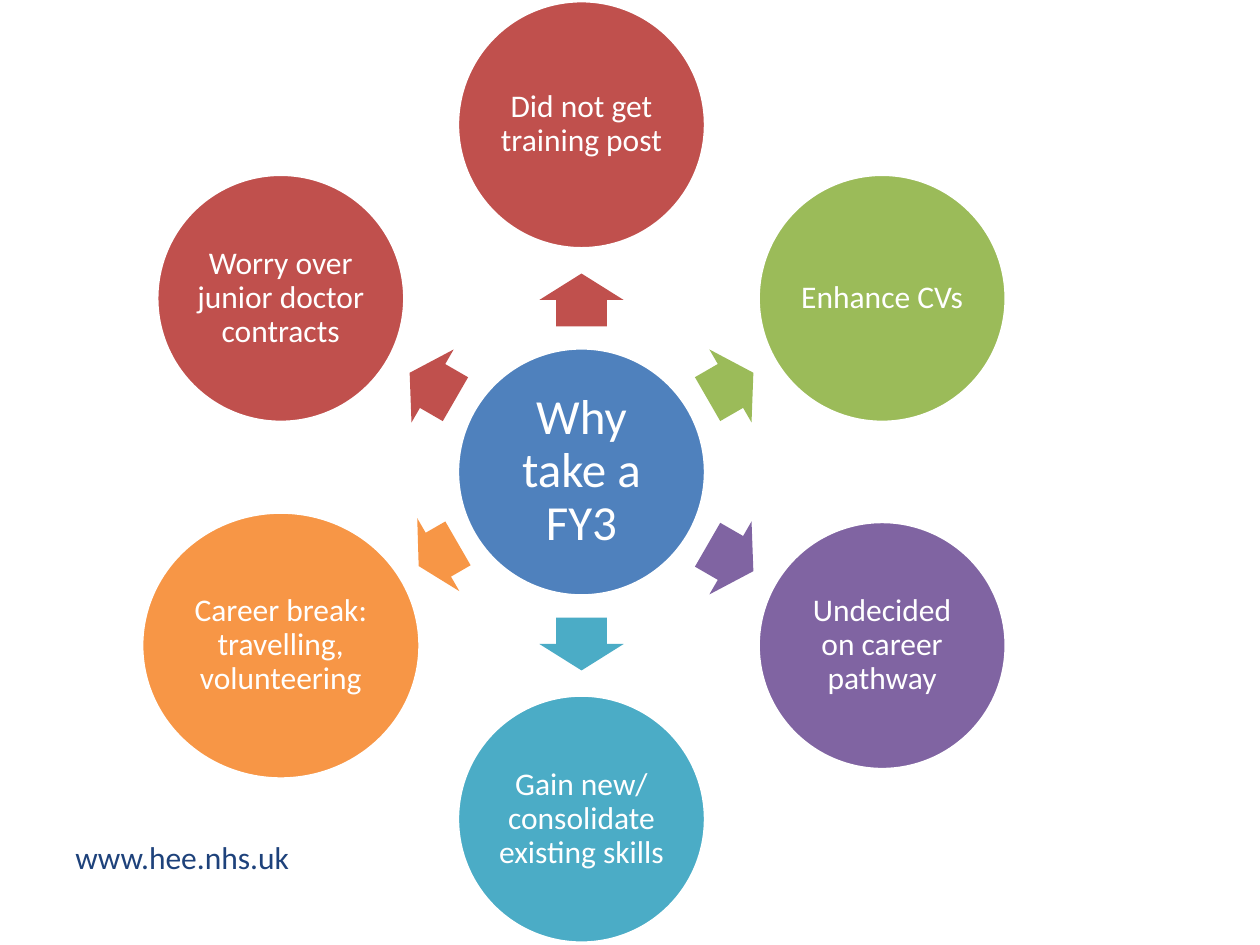
from math import cos, radians, sin

from pptx import Presentation
from pptx.dml.color import RGBColor
from pptx.enum.shapes import MSO_SHAPE
from pptx.enum.text import MSO_ANCHOR, MSO_AUTO_SIZE, PP_ALIGN
from pptx.util import Pt

FONT = "Calibri"
WHITE = "FFFFFF"
NAVY = "1E427B"
BLUE = "4F81BD"
CENTRE = (332.3, 269.7)
RING_RADIUS = 198.4
CIRCLE = (141.8, 141.8)
BREAK_CIRCLE = (159.1, 152.6)
ARROW_RADIUS = 98.3
ARROW = (30.2, 48.2)
BREAK_ARROW_RADIUS = 94.5
BREAK_ARROW = (25.9, 48.2)

# Angle (clockwise from the right), text, colour
REASONS = [
    (270, "Did not get training post", "C0504D"),
    (330, "Enhance CVs", "9BBB59"),
    (30, "Undecided on career pathway", "8064A2"),
    (90, "Gain new/ consolidate existing skills", "4BACC6"),
    (150, "Career break: travelling, volunteering", "F79646"),
    (210, "Worry over junior doctor contracts", "C0504D"),
]
BREAK_ANGLE = 150


def rgb(value):
    return RGBColor.from_string(value)


def apply(obj, values):
    for name, value in values.items():
        setattr(obj, name, value)


def write(tf, text, size, color):
    p = tf.paragraphs[0]
    r = p.add_run()
    r.text = text
    apply(r.font, {"name": FONT, "size": Pt(size)})
    r.font.color.rgb = rgb(color)
    return p


def on_ring(angle, radius):
    """Point at a clockwise angle around the centre of the diagram."""
    a = radians(angle)
    return CENTRE[0] + radius * cos(a), CENTRE[1] + radius * sin(a)


def add_filled(s, kind, centre, size, color):
    (x, y), (w, h) = centre, size
    sp = s.shapes.add_shape(kind, Pt(x - w / 2), Pt(y - h / 2), Pt(w), Pt(h))
    sp.shadow.inherit = False
    sp.fill.solid()
    sp.fill.fore_color.rgb = rgb(color)
    return sp


def add_circle(s, centre, size, color, text, font_size, inset):
    sp = add_filled(s, MSO_SHAPE.OVAL, centre, size, color)
    sp.line.color.rgb = rgb(WHITE)
    sp.line.width = Pt(2)
    tf = sp.text_frame
    apply(tf, {"word_wrap": True, "vertical_anchor": MSO_ANCHOR.MIDDLE})
    sides = ("left", "top", "right", "bottom")
    apply(tf, {f"margin_{side}": Pt(inset) for side in sides})
    p = write(tf, text, font_size, WHITE)
    apply(p, {"alignment": PP_ALIGN.CENTER, "line_spacing": 0.9})


def add_arrow(s, angle, radius, size, color):
    sp = add_filled(s, MSO_SHAPE.RIGHT_ARROW, on_ring(angle, radius), size, color)
    sp.line.fill.background()
    sp.rotation = angle
    sp.adjustments[0] = 0.6
    sp.adjustments[1] = 0.5


def add_web_address(s):
    tf = s.shapes.add_textbox(Pt(36), Pt(475.2), Pt(147.6), Pt(28.8)).text_frame
    apply(tf, {"word_wrap": False, "auto_size": MSO_AUTO_SIZE.SHAPE_TO_FIT_TEXT})
    write(tf, "www.hee.nhs.uk", 18, NAVY)


def main():
    prs = Presentation()
    apply(prs, {"slide_width": Pt(720), "slide_height": Pt(540)})
    s = prs.slides.add_slide(prs.slide_layouts[6])

    add_web_address(s)
    add_circle(s, CENTRE, CIRCLE, BLUE, "Why take a FY3", 28, 2.8)
    for angle, text, color in REASONS:
        is_break = angle == BREAK_ANGLE
        radius = BREAK_ARROW_RADIUS if is_break else ARROW_RADIUS
        add_arrow(s, angle, radius, BREAK_ARROW if is_break else ARROW, color)
        size = BREAK_CIRCLE if is_break else CIRCLE
        add_circle(s, on_ring(angle, RING_RADIUS), size, color, text, 18, 1.8)

    prs.save("out.pptx")


if __name__ == "__main__":
    main()
